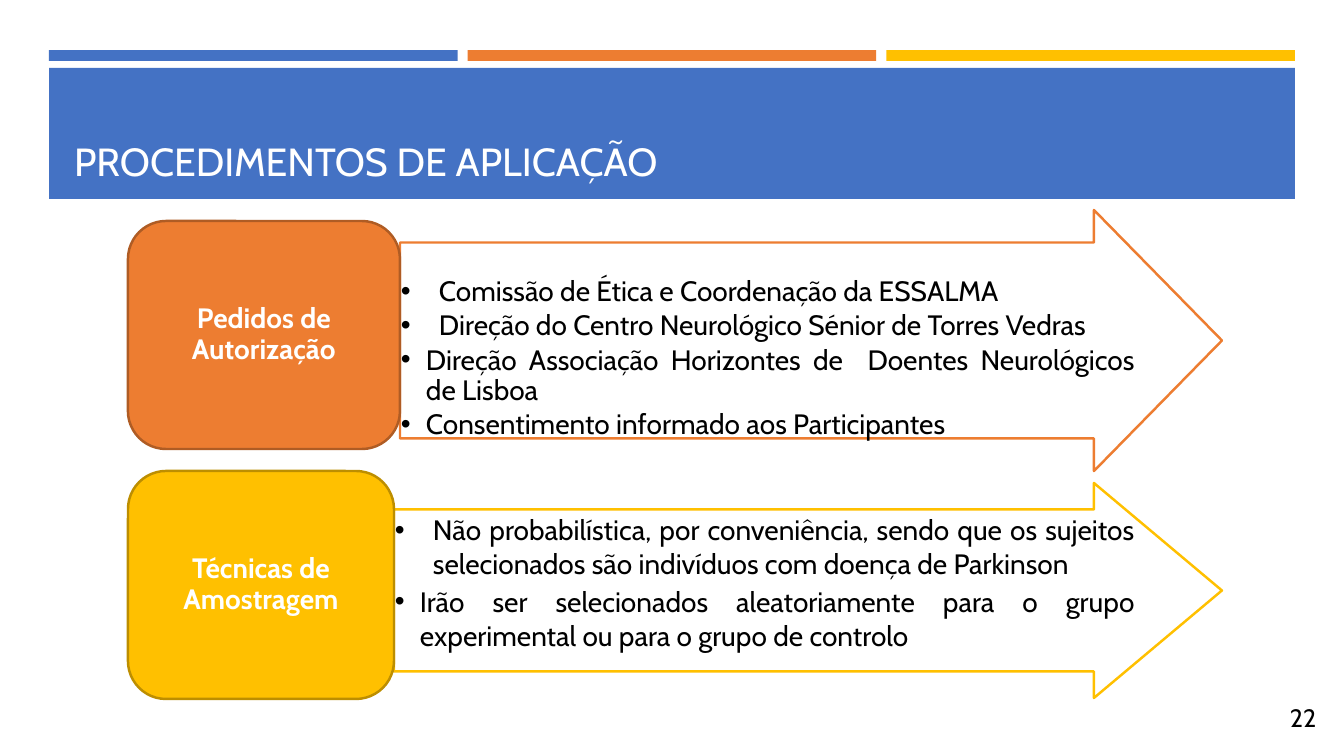
import pptx
import pptx.util
from lxml import etree
from pptx.dml.color import RGBColor
from pptx.enum.shapes import MSO_SHAPE
from pptx.enum.text import MSO_ANCHOR, PP_ALIGN
from pptx.oxml.ns import qn

TITLE = "PROCEDIMENTOS DE APLICAÇÃO"
PAGE_NUMBER = "22"
# Lengths are px; each bullet is (hanging indent, text).
ROWS = [
    {
        "label": "Pedidos de Autorização",
        "color": "orange", "edge": "dark_orange",
        "label_box": (128, 221, 272, 228),
        "arrow": (400, 210, 822, 261), "shaft": 196,
        "text_top": 277, "line_spacing": 0.9,
        "bullets": [
            (38, "Comissão de Ética e Coordenação da ESSALMA"),
            (38, "Direção do Centro Neurológico Sénior de Torres Vedras"),
            (25, "Direção Associação Horizontes de  Doentes Neurológicos de Lisboa"),
            (25, "Consentimento informado aos Participantes"),
        ],
    },
    {
        "label": "Técnicas de Amostragem",
        "color": "yellow", "edge": "dark_yellow",
        "label_box": (128, 471, 266, 228),
        "arrow": (394, 483, 828, 215), "shaft": 162,
        "text_top": 513, "line_spacing": 1.0,
        "bullets": [
            (38, "Não probabilística, por conveniência, sendo que os sujeitos "
                 "selecionados são indivíduos com doença de Parkinson"),
            (25, "Irão ser selecionados aleatoriamente para o grupo "
                 "experimental ou para o grupo de controlo"),
        ],
    },
]
THEME = {
    "font": "Cabin", "bullet_font": "Arial",
    "blue": "4472C4", "orange": "ED7D31", "yellow": "FFC000",
    "dark_orange": "AF5C24", "dark_yellow": "BD8E00",
    "white": "FFFFFF", "black": "000000",
    "title_size": 28, "body_size": 20, "number_size": 18, "line_width": 1.75,
}
EMU_PER_PX = 914400 / 100.8
SLIDE_SIZE = (1344, 756)
BAND = (49, 68, 1246, 131)
STRIPE_TOP, STRIPE_HEIGHT, STRIPE_GAP = 50, 11, 10
ARROW_HEAD = 128
TEXT_RIGHT = 1135


def px(length):
    return pptx.util.Emu(round(length * EMU_PER_PX))


def color(name):
    return RGBColor.from_string(THEME[name])


def add_block(slide, preset, box, fill, edge=None):
    shape = slide.shapes.add_shape(preset, *map(px, box))
    shape.shadow.inherit = False
    shape.fill.solid()
    shape.fill.fore_color.rgb = color(fill)
    if edge:
        shape.line.color.rgb = color(edge)
        shape.line.width = pptx.util.Pt(THEME["line_width"])
    else:
        shape.line.fill.background()
    return shape


def set_frame(shape, anchor, margins):
    """Wrap the text and set its left, top, right and bottom margins."""
    frame = shape.text_frame
    frame.word_wrap = True
    frame.vertical_anchor = anchor
    (frame.margin_left, frame.margin_top,
     frame.margin_right, frame.margin_bottom) = map(px, margins)
    return frame


def write(paragraph, text, size, font_color, align=PP_ALIGN.LEFT, bold=False):
    paragraph.text = text
    paragraph.alignment = align
    font = paragraph.font
    font.name = THEME["font"]
    font.size = pptx.util.Pt(THEME[size])
    font.bold = bold
    font.color.rgb = color(font_color)


def add_bullet(paragraph, indent):
    properties = paragraph._p.get_or_add_pPr()
    properties.set("marL", str(px(indent)))
    properties.set("indent", str(-px(indent)))
    defaults = properties.find(qn("a:defRPr"))
    defaults.addprevious(etree.Element(qn("a:buFont"), typeface=THEME["bullet_font"]))
    defaults.addprevious(etree.Element(qn("a:buChar"), char="•"))


def add_header(slide):
    left, _, width, _ = BAND
    names = ("blue", "orange", "yellow")
    stripe_width = (width - STRIPE_GAP * (len(names) - 1)) / len(names)
    for index, name in enumerate(names):
        stripe_left = left + index * (stripe_width + STRIPE_GAP)
        add_block(slide, MSO_SHAPE.RECTANGLE,
                  (stripe_left, STRIPE_TOP, stripe_width, STRIPE_HEIGHT), name)
    band = add_block(slide, MSO_SHAPE.RECTANGLE, BAND, "blue")
    frame = set_frame(band, MSO_ANCHOR.BOTTOM, (25, 5, 25, 15))
    write(frame.paragraphs[0], TITLE, "title_size", "white")


def add_row(slide, row):
    left, top, _, height = row["arrow"]
    arrow = add_block(slide, MSO_SHAPE.RIGHT_ARROW, row["arrow"], "white", row["color"])
    arrow.adjustments[0] = row["shaft"] / height
    arrow.adjustments[1] = ARROW_HEAD / height

    label = add_block(slide, MSO_SHAPE.ROUNDED_RECTANGLE, row["label_box"],
                      row["color"], row["edge"])
    frame = set_frame(label, MSO_ANCHOR.MIDDLE, (19, 15, 19, 15))
    write(frame.paragraphs[0], row["label"], "body_size", "white", PP_ALIGN.CENTER, True)
    frame.paragraphs[0].line_spacing = 0.9

    text_top = row["text_top"]
    text_box = slide.shapes.add_textbox(*map(px, (
        left, text_top, TEXT_RIGHT - left, top + height - text_top)))
    frame = set_frame(text_box, MSO_ANCHOR.TOP, (1, 0, 0, 0))
    for index, (indent, text) in enumerate(row["bullets"]):
        paragraph = frame.add_paragraph() if index else frame.paragraphs[0]
        write(paragraph, text, "body_size", "black", PP_ALIGN.JUSTIFY)
        paragraph.line_spacing = row["line_spacing"]
        paragraph.space_after = pptx.util.Pt(3)
        add_bullet(paragraph, indent)


def main():
    presentation = pptx.Presentation()
    presentation.slide_width, presentation.slide_height = map(px, SLIDE_SIZE)
    slide = presentation.slides.add_slide(presentation.slide_layouts[6])
    add_header(slide)
    for row in ROWS:
        add_row(slide, row)
    number = slide.shapes.add_textbox(*map(px, (1280, 697, 51, 40)))
    frame = set_frame(number, MSO_ANCHOR.TOP, (10, 5, 10, 5))
    write(frame.paragraphs[0], PAGE_NUMBER, "number_size", "black")
    presentation.save("out.pptx")


if __name__ == "__main__":
    main()
